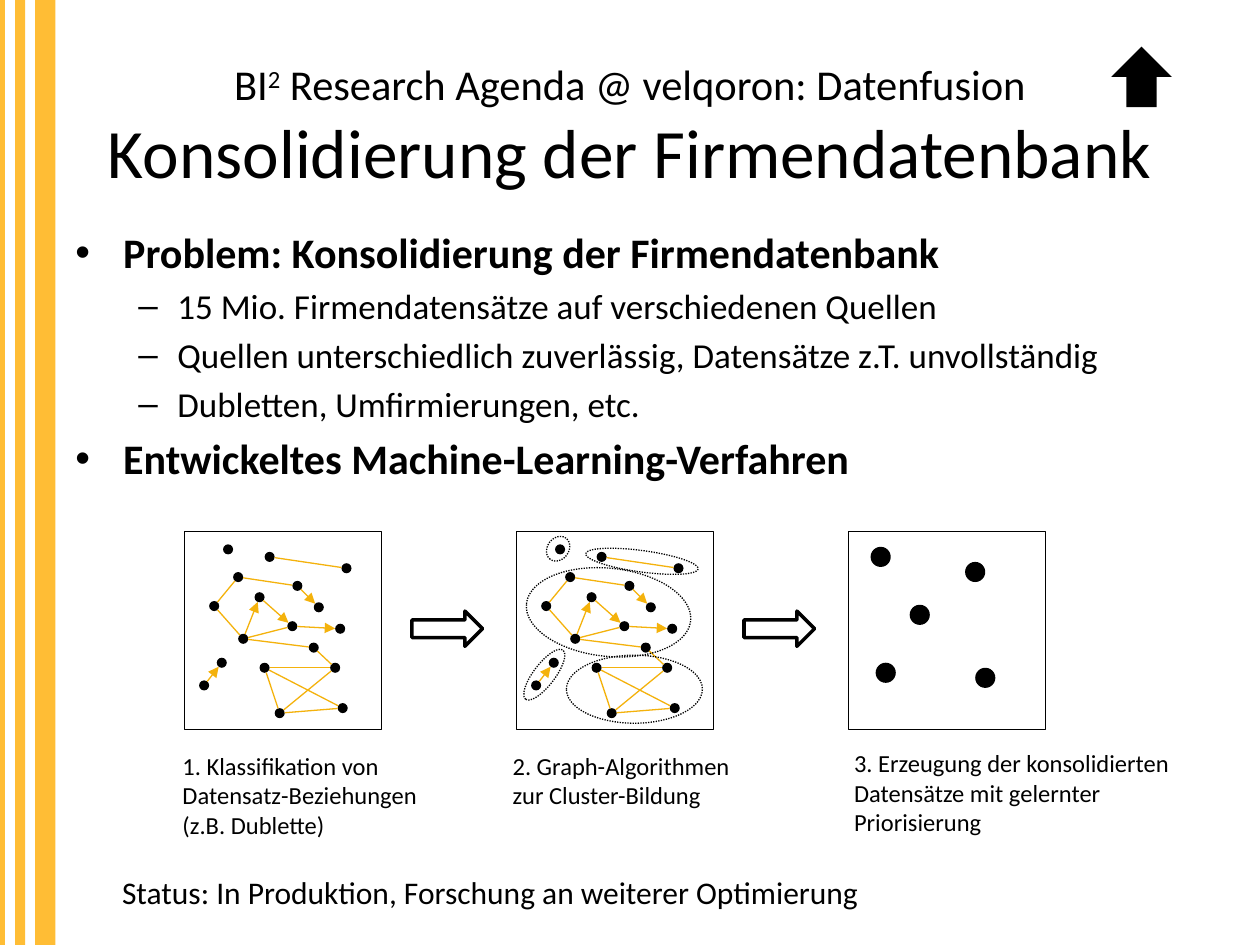
from math import hypot
from lxml.etree import SubElement
from pptx import Presentation
from pptx.dml.color import RGBColor
from pptx.enum.dml import MSO_LINE
from pptx.enum.shapes import MSO_CONNECTOR, MSO_SHAPE
from pptx.enum.text import MSO_ANCHOR, PP_ALIGN
from pptx.oxml.ns import qn
from pptx.util import Inches, Pt

COLORS = {"black": "000000", "stripe": "FFBD35", "edge": "F4B20C"}

prs = Presentation()
prs.slide_width, prs.slide_height = Inches(10), Inches(7.5)
COL, ROW = prs.slide_width / 100, prs.slide_height / 75
s = prs.slides.add_slide(prs.slide_layouts[6])


def write(p, text, size=14, bold=False, raised=False):
    for i, line in enumerate(text.split("\n")):
        if i:
            p.add_line_break()
        if not line:
            continue
        r = p.add_run()
        r.text = line
        r.font.name, r.font.size, r.font.bold = "Calibri", Pt(size), bold
        r.font.color.rgb = RGBColor.from_string(COLORS["black"])
        if raised:
            r.font._element.set("baseline", "30000")


def place(kind, x, y, w, h, fill=None, line=None, dash=None, turn=0):
    sp = s.shapes.add_shape(kind, int(x * COL), int(y * ROW), int(w * COL), int(h * ROW))
    sp.shadow.inherit = False
    sp.rotation = turn
    if fill:
        sp.fill.solid()
        sp.fill.fore_color.rgb = RGBColor.from_string(COLORS[fill])
    else:
        sp.fill.background()
    if line:
        sp.line.width = Pt(line)
        sp.line.color.rgb = RGBColor.from_string(COLORS["black"])
        sp.line.dash_style = dash
    else:
        sp.line.fill.background()


for x, w in [(2.8, 1.6), (1.2, 0.8), (0, 0.4)]:
    place(MSO_SHAPE.RECTANGLE, x, 0, w, 75, fill="stripe")
place(MSO_SHAPE.UP_ARROW, 88.2, 3.7, 4.8, 4.8, fill="black")

tf = s.shapes.add_textbox(int(5 * COL), int(3.7 * ROW), int(90 * COL), int(12.5 * ROW)).text_frame
tf.word_wrap = True
tf.vertical_anchor = MSO_ANCHOR.MIDDLE
p = tf.paragraphs[0]
p.alignment = PP_ALIGN.CENTER
write(p, "BI", size=24.3)
write(p, "2", size=24.3, raised=True)
write(p, " Research Agenda @ velqoron: Datenfusion\n", size=24.3)
write(p, "Konsolidierung der Firmendatenbank", size=39.6)

BODY = [
    (0, "Problem: Konsolidierung der Firmendatenbank"),
    (1, "15 Mio. Firmendatensätze auf verschiedenen Quellen"),
    (1, "Quellen unterschiedlich zuverlässig, Datensätze z.T. unvollständig"),
    (1, "Dubletten, Umfirmierungen, etc."),
    (0, "Entwickeltes Machine-Learning-Verfahren"),
]
LEVELS = [("•", 24, 0.38, 0.38), ("–", 20, 0.81, 0.31)]
tf = s.shapes.add_textbox(int(5 * COL), int(17.5 * ROW), int(90 * COL), int(22 * ROW)).text_frame
tf.word_wrap = True
for i, (level, text) in enumerate(BODY):
    p = tf.add_paragraph() if i else tf.paragraphs[0]
    bullet, size, margin, hang = LEVELS[level]
    p.level = level
    p.space_before = Pt(size * 0.2)
    pPr = p._p.get_or_add_pPr()
    pPr.set("marL", str(Inches(margin)))
    pPr.set("indent", str(-Inches(hang)))
    SubElement(pPr, qn("a:buFont"), typeface="Arial")
    SubElement(pPr, qn("a:buChar"), char=bullet)
    write(p, text, size=size, bold=level == 0)

LEFT, TOP, SIDE, PITCH = 14.6, 42.2, 15.7, 26.35
DOTS = {
    "a": (4.3, 3.6), "b": (6, 5.2), "c": (9, 4.3), "d": (8.6, 7.5), "e": (12.4, 7.7),
    "f": (4.7, 8.5), "g": (10.7, 6), "h": (6.4, 10.8), "i": (12.9, 2.9), "j": (3, 10.4),
    "k": (12, 10.8), "l": (10.3, 9.2), "m": (6.8, 2), "n": (12.6, 14), "o": (2.4, 5.9),
    "p": (1.6, 12.2), "q": (7.6, 14.4), "r": (3.5, 1.4),
}
DIRECTED = ["cg", "de", "fb", "bd", "pj"]
UNDIRECTED = ["oa", "fo", "kl", "lf", "kh", "im", "ca", "df", "nq", "kq", "hn", "hq"]
RADIUS = 0.4

for i in range(3):
    left = LEFT + i * PITCH
    place(MSO_SHAPE.RECTANGLE, left, TOP, SIDE, SIDE, line=0.25)
    if i == 2:
        continue
    place(MSO_SHAPE.RIGHT_ARROW, left + 18.1, TOP + 6.3, 5.6, 2.8, line=2)
    for x, y in DOTS.values():
        place(MSO_SHAPE.OVAL, left + x - RADIUS, TOP + y - RADIUS, 2 * RADIUS, 2 * RADIUS, fill="black")
    for edge in DIRECTED + UNDIRECTED:
        (x1, y1), (x2, y2) = DOTS[edge[0]], DOTS[edge[1]]
        trim = RADIUS / hypot(x2 - x1, y2 - y1)
        dx, dy = (x2 - x1) * trim, (y2 - y1) * trim
        c = s.shapes.add_connector(
            MSO_CONNECTOR.STRAIGHT,
            int((left + x1 + dx) * COL), int((TOP + y1 + dy) * ROW),
            int((left + x2 - dx) * COL), int((TOP + y2 - dy) * ROW))
        c.line.width = Pt(0.75)
        c.line.color.rgb = RGBColor.from_string(COLORS["edge"])
        if edge in DIRECTED:
            SubElement(c.line._get_or_add_ln(), qn("a:tailEnd"), type="triangle")
        SubElement(c._element.spPr, qn("a:effectLst"))

CLUSTERS = [
    (0.8, 2.9, 13.1, 7, 5.9), (4, 9.8, 10.8, 5.4, 0), (-0.2, 10.5, 4.9, 1.7, 307.3),
    (5.5, 1.5, 9, 1.7, 7.7), (2.3, 0.5, 2.1, 1.7, 307.3),
]
for x, y, w, h, turn in CLUSTERS:
    place(MSO_SHAPE.OVAL, LEFT + PITCH + x, TOP + y, w, h, line=0.75, dash=MSO_LINE.ROUND_DOT, turn=turn)

for x, y in [(1.8, 1.2), (9.3, 2.4), (4.9, 5.8), (2.2, 10.4), (10.1, 10.8)]:
    place(MSO_SHAPE.OVAL, LEFT + 2 * PITCH + x, TOP + y, 1.6, 1.6, fill="black")

LABELS = [
    (13.5, 59.1, 21.3, 8.1, 14, ["1. Klassifikation von\nDatensatz-Beziehungen\n(z.B. Dublette)"]),
    (39.7, 59.1, 19.4, 5.7, 14, ["2. Graph-Algorithmen\nzur Cluster-Bildung"]),
    (66.8, 58.9, 27.3, 8.1, 14, ["3. Erzeugung der konsolidierten\nDatensätze mit gelernter", "Priorisierung"]),
    (8.7, 68.8, 61.2, 4, 18, ["Status: In Produktion, Forschung an weiterer Optimierung"]),
]
for x, y, w, h, size, paragraphs in LABELS:
    tf = s.shapes.add_textbox(int(x * COL), int(y * ROW), int(w * COL), int(h * ROW)).text_frame
    tf.word_wrap = False
    for i, text in enumerate(paragraphs):
        write(tf.add_paragraph() if i else tf.paragraphs[0], text, size=size)

prs.save("out.pptx")
